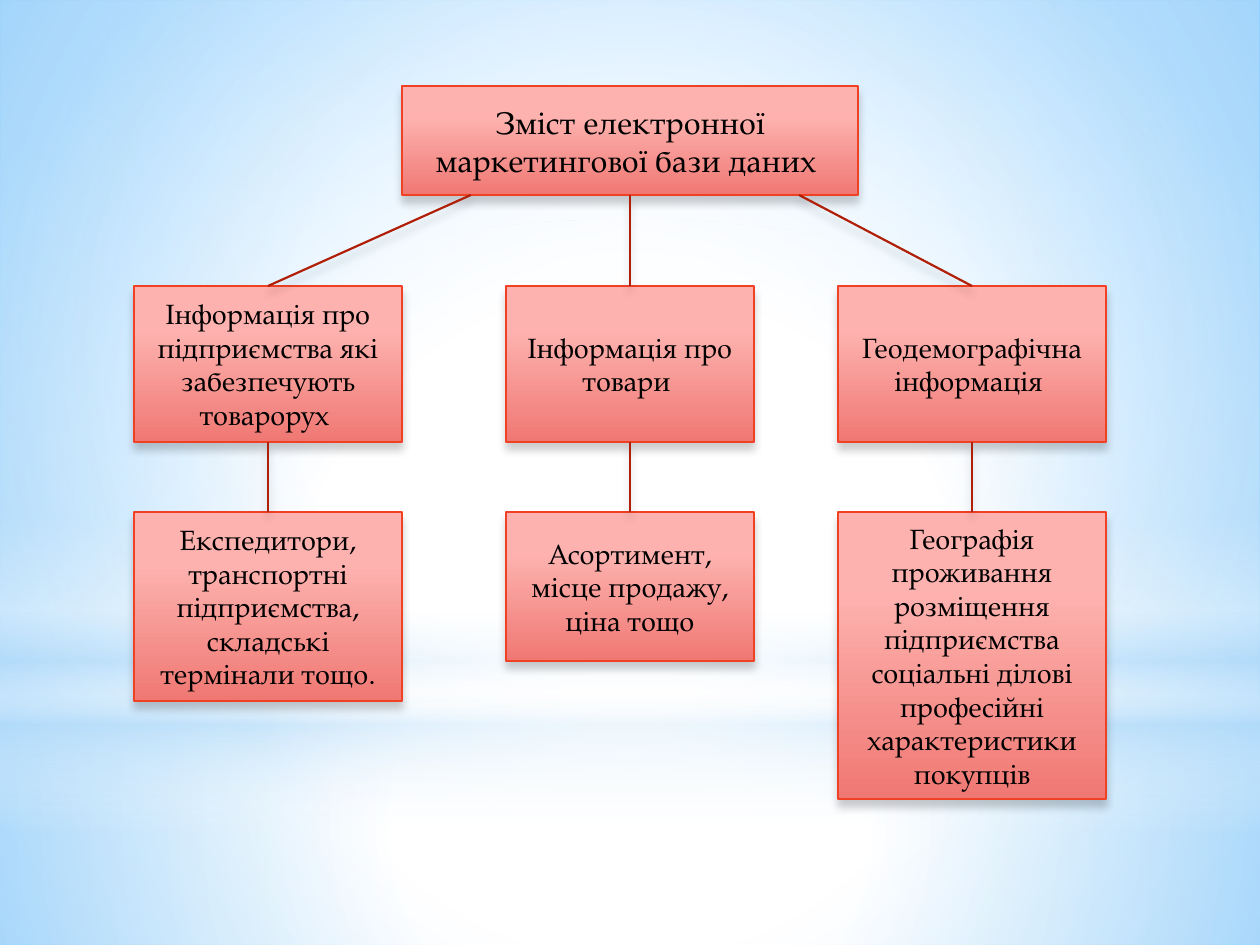
"""Build a slide with a tree of what an electronic marketing database contains."""
from lxml import etree
from pptx import Presentation
from pptx import util as u
from pptx.dml.color import RGBColor
from pptx.enum import shapes, text
from pptx.oxml.ns import qn

SCALE = u.Inches(1) / 126
THEME = {
    "font": "TeX Gyre Pagella",
    "ink": "000000",
    "border": "F14124",
    "branch": "B01F07",
    "root_size": 18,
    "node_size": 16,
    "border_width": 0.75,
    "branch_width": 1.25,
    "node": [(28, "FDB2AF", 100), (100, "F07873", 100)],
    "sky": [(0, "FFFFFF", 100), (42, "FFFFFF", 100), (100, "63BCFF", 100)],
    "ground": [(0, "FFFFFF", 91), (37, "FFFFFF", 76), (100, "B4DCFA", 79)],
    "air": [(0, "FFFFFF", 89), (48, "FFFFFF", 62), (100, "B4DCFA", 79)],
    "horizon": [(0, "FFFFFF", 0), (29, "FFFFFF", 30), (45, "B4DCFA", 40),
                (55, "FFFFFF", 26), (65, "B4DCFA", 60), (100, "FFFFFF", 0)],
    "glow": [(0, "FFFFFF", 100), (56, "FFFFFF", 0)],
}


def apply_gradient(holder, stops, focus=None):
    gradient = etree.Element(qn("a:gradFill"), rotWithShape="1")
    stop_list = etree.SubElement(gradient, qn("a:gsLst"))
    for position, color, opacity in stops:
        stop = etree.SubElement(stop_list, qn("a:gs"), pos=str(position * 1000))
        tint = etree.SubElement(stop, qn("a:srgbClr"), val=color)
        if opacity < 100:
            etree.SubElement(tint, qn("a:alpha"), val=str(opacity * 1000))
    if focus:
        path = etree.SubElement(gradient, qn("a:path"), path="circle")
        edges = {side: str(inset * 1000) for side, inset in zip("ltrb", focus)}
        etree.SubElement(path, qn("a:fillToRect"), **edges)
    else:
        etree.SubElement(gradient, qn("a:lin"), ang="5400000", scaled="0")
    holder.replace(holder.find(qn("a:solidFill")), gradient)


def cast_shadow(properties):
    effects = etree.SubElement(properties, qn("a:effectLst"))
    shadow = etree.SubElement(effects, qn("a:outerShdw"), blurRad=str(u.Pt(5)),
                              dist=str(u.Pt(4)), dir="5400000", rotWithShape="0")
    tint = etree.SubElement(shadow, qn("a:srgbClr"), val=THEME["ink"])
    etree.SubElement(tint, qn("a:alpha"), val="20000")


deck = Presentation()
deck.slide_width, deck.slide_height = u.Inches(10), u.Inches(7.5)
slide = deck.slides.add_slide(deck.slide_layouts[6])

slide.background.fill.solid()
apply_gradient(slide.element.find(".//" + qn("p:bgPr")), THEME["sky"], (24, 44, 24, 12))

RECT, OVAL = shapes.MSO_SHAPE.RECTANGLE, shapes.MSO_SHAPE.OVAL
CENTER = (50, 50, 50, 50)
backdrop = [
    (RECT, 703, 242, "ground", CENTER),
    (RECT, 0, 703, "air", CENTER),
    (RECT, 519, 315, "horizon", None),
    (OVAL, 220, 703, "glow", CENTER),
]
for outline, top, height, stops, focus in backdrop:
    layer = slide.shapes.add_shape(
        outline, 0, round(top * SCALE), deck.slide_width, round(height * SCALE))
    layer.fill.solid()
    layer.line.fill.background()
    layer.shadow.inherit = False
    apply_gradient(layer.element.spPr, THEME[stops], focus)

ROOT_TOP, ROOT_HEIGHT = 86, 109
TOPIC_TOP, TOPIC_HEIGHT = 286, 156
DETAIL_TOP = 512
root_bottom, topic_bottom = ROOT_TOP + ROOT_HEIGHT, TOPIC_TOP + TOPIC_HEIGHT

columns = [
    (268, 268, 471, 189, "Інформація про підприємства які забезпечують товарорух ",
     "Експедитори, транспортні підприємства, складські термінали тощо."),
    (630, 248, 630, 149, "Інформація про товари ",
     "Асортимент, місце продажу, ціна тощо"),
    (972, 268, 799, 287, "Геодемографічна інформація ",
     "Географія проживання розміщення підприємства соціальні ділові "
     "професійні характеристики покупців"),
]
nodes = [(630, ROOT_TOP, 456, ROOT_HEIGHT, "root_size",
          "Зміст електронної маркетингової бази даних ")]
branches = []
for middle, width, root_x, detail_height, topic, detail in columns:
    nodes.append((middle, TOPIC_TOP, width, TOPIC_HEIGHT, "node_size", topic))
    nodes.append((middle, DETAIL_TOP, width, detail_height, "node_size", detail))
    branches.append((root_x, root_bottom, middle, TOPIC_TOP))
    branches.append((middle, topic_bottom, middle, DETAIL_TOP))

for middle, top, width, height, size, wording in nodes:
    bounds = (middle - width / 2, top, width, height)
    node = slide.shapes.add_shape(RECT, *(round(length * SCALE) for length in bounds))
    node.fill.solid()
    node.line.color.rgb = RGBColor.from_string(THEME["border"])
    node.line.width = u.Pt(THEME["border_width"])
    apply_gradient(node.element.spPr, THEME["node"])
    cast_shadow(node.element.spPr)
    frame = node.text_frame
    frame.word_wrap = True
    frame.vertical_anchor = text.MSO_ANCHOR.MIDDLE
    frame.text = wording
    label = frame.paragraphs[0]
    label.alignment = text.PP_ALIGN.CENTER
    font = label.runs[0].font
    font.name = THEME["font"]
    font.size = u.Pt(THEME[size])
    font.color.rgb = RGBColor.from_string(THEME["ink"])

for ends in branches:
    branch = slide.shapes.add_connector(
        shapes.MSO_CONNECTOR.STRAIGHT, *(round(length * SCALE) for length in ends))
    branch.line.color.rgb = RGBColor.from_string(THEME["branch"])
    branch.line.width = u.Pt(THEME["branch_width"])
    cast_shadow(branch.element.spPr)

deck.save("out.pptx")
